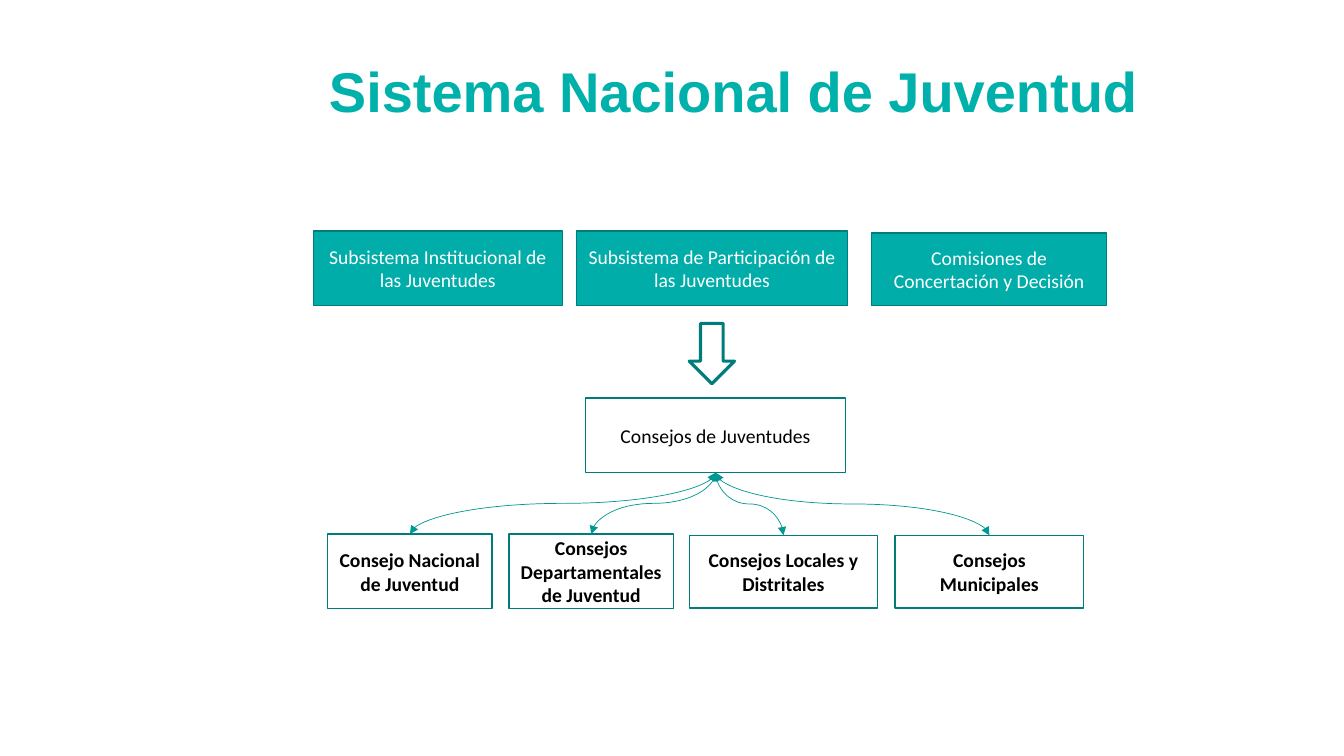
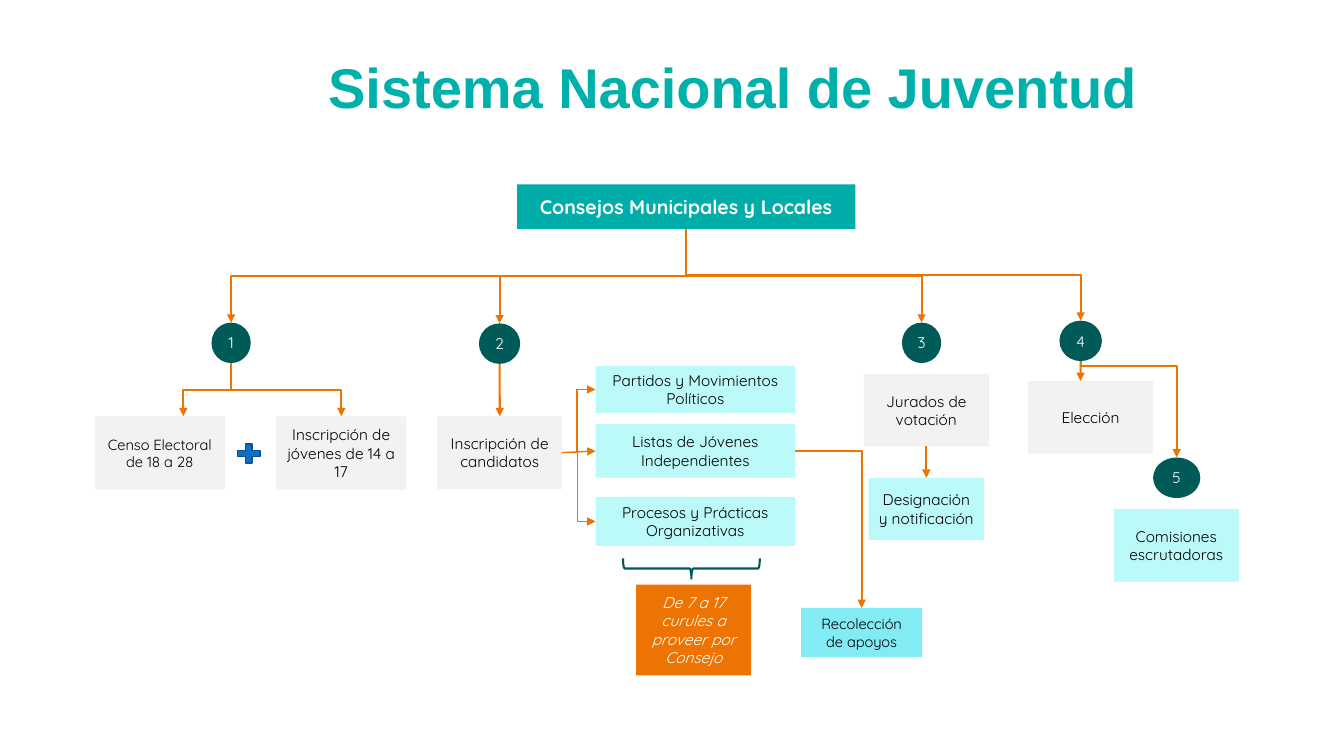
from dataclasses import dataclass

from lxml.etree import SubElement
from pptx import Presentation
from pptx.dml.color import RGBColor
from pptx.enum.shapes import MSO_CONNECTOR as LINK, MSO_SHAPE as SHAPE
from pptx.enum.text import MSO_ANCHOR as ANCHOR, MSO_AUTO_SIZE as FIT, PP_ALIGN as ALIGN
from pptx.oxml.ns import qn
from pptx.util import Cm, Pt


@dataclass(frozen=True)
class Theme:
    title: str = "00B1AB"
    teal: str = "00ADA9"
    teal_line: str = "007D7A"
    curve: str = "009893"
    dark: str = "005A58"
    orange: str = "ED7403"
    gray: str = "F2F2F2"
    pale: str = "BBFAF9"
    aqua: str = "82EBF4"
    blue: str = "0F6FC6"
    blue_line: str = "0B5292"
    white: str = "FFFFFF"
    black: str = "000000"
    title_font: str = "Arial"
    system_font: str = "Calibri"
    council_font: str = "Quicksand"
    title_size: float = 40
    large: float = 14
    body: float = 11
    small: float = 10.5


T = Theme()
TOP, LEFT, BOTTOM, RIGHT = range(4)
TITLE = "Sistema Nacional de Juventud"

SYSTEM_BASE = dict(font=T.system_font, size=T.large, line=T.teal_line, line_width=1)
COUNCIL_BASE = dict(font=T.council_font, size=T.body, color=T.black)
STYLES = {
    "subsystem": dict(SYSTEM_BASE, fill=T.teal, color=T.white),
    "councils": dict(SYSTEM_BASE, fill=T.white, color=T.black),
    "council": dict(SYSTEM_BASE, fill=T.white, color=T.black, bold=True),
    "root": dict(COUNCIL_BASE, fill=T.teal, color=T.white, size=T.large, bold=True),
    "stage": dict(COUNCIL_BASE, fill=T.gray),
    "census": dict(COUNCIL_BASE, fill=T.gray, size=T.small),
    "detail": dict(COUNCIL_BASE, fill=T.pale),
    "support": dict(COUNCIL_BASE, fill=T.aqua, size=T.small),
    "seats": dict(COUNCIL_BASE, fill=T.orange, color=T.white, italic=True),
    "step": dict(COUNCIL_BASE, fill=T.dark, color=T.white, kind=SHAPE.OVAL),
    "down": dict(kind=SHAPE.DOWN_ARROW, line=T.teal_line, line_width=2.25),
    "brace": dict(kind=SHAPE.LEFT_BRACE, line=T.dark, line_width=1.5, rotation=270),
    "plus": dict(kind=SHAPE.MATH_PLUS, fill=T.blue, line=T.blue_line, line_width=1),
}

# key: (style, text, (left, top, width, height) in cm)
SYSTEM = {
    "institutional": ("subsystem", "Subsistema Institucional de las Juventudes",
                      (7.9, 5.82, 6.27, 1.88)),
    "participation": ("subsystem", "Subsistema de Participación de las Juventudes",
                      (14.53, 5.82, 6.83, 1.88)),
    "commissions": ("subsystem", "Comisiones de Concertación y Decisión",
                    (21.97, 5.87, 5.92, 1.83)),
    "arrow": ("down", "", (17.37, 8.15, 1.14, 1.52)),
    "councils": ("councils", "Consejos de Juventudes", (14.76, 10.03, 6.55, 1.88)),
    "national": ("council", "Consejo Nacional de Juventud", (8.26, 13.46, 4.14, 1.88)),
    "departmental": ("council", "Consejos Departamentales de Juventud",
                     (12.83, 13.46, 4.14, 1.88)),
    "local": ("council", "Consejos Locales y Distritales", (17.37, 13.49, 4.75, 1.83)),
    "municipal": ("council", "Consejos Municipales", (22.56, 13.49, 4.75, 1.83)),
}
COUNCILS = {
    "root": ("root", "Consejos Municipales y Locales", (13.03, 4.65, 8.53, 1.12)),
    "1": ("step", "1", (5.33, 8.13, 0.99, 1.02)),
    "2": ("step", "2", (12.07, 8.15, 1.04, 1.02)),
    "3": ("step", "3", (22.73, 8.13, 0.99, 1.02)),
    "4": ("step", "4", (26.7, 8.08, 1.07, 1.02)),
    "5": ("step", "5", (29.06, 11.53, 1.19, 1.02)),
    "census": ("census", "Censo Electoral de 18 a 28", (2.39, 10.49, 3.28, 1.85)),
    "plus": ("plus", "", (5.89, 11.1, 0.76, 0.66)),
    "youth": ("stage", "Inscripción de jóvenes de 14 a 17", (6.96, 10.49, 3.28, 1.85)),
    "candidates": ("stage", "Inscripción de candidatos", (11.02, 10.49, 3.15, 1.83)),
    "parties": ("detail", "Partidos y Movimientos Políticos", (15.01, 9.22, 5.03, 1.19)),
    "lists": ("detail", "Listas de Jóvenes Independientes", (15.01, 10.69, 5.03, 1.35)),
    "practices": ("detail", "Procesos y Prácticas Organizativas",
                  (15.01, 12.52, 5.03, 1.24)),
    "brace": ("brace", "", (17.17, 12.6, 0.51, 3.45)),
    "seats": ("seats", "De 7 a 17 curules a proveer por Consejo",
              (16.03, 14.73, 2.9, 2.29)),
    "support": ("support", "Recolección de apoyos", (20.19, 15.32, 3.05, 1.24)),
    "jurors": ("stage", "Jurados de votación", (21.77, 9.42, 3.15, 1.83)),
    "notice": ("detail", "Designación y notificación", (21.89, 12.04, 2.91, 1.57)),
    "election": ("stage", "Elección", (25.91, 9.6, 3.15, 1.83)),
    "scrutiny": ("detail", "Comisiones escrutadoras", (28.07, 12.83, 3.15, 1.83)),
}

CURVE = dict(kind=LINK.CURVE, color=T.curve, width=0.5, both_ends=True)
ELBOW = dict(kind=LINK.ELBOW, width=1.5)
SPLIT = dict(kind=LINK.ELBOW, width=1.25, sides=(RIGHT, LEFT), bend=0.45)

# (from, to, format)
SYSTEM_LINKS = [("councils", key, CURVE)
                for key in ("municipal", "local", "departmental", "national")]
COUNCIL_LINKS = [
    *[("root", step, ELBOW) for step in "1234"],
    ("1", "census", dict(ELBOW, end_x=4.62)),
    ("1", "youth", ELBOW),
    ("2", "candidates", dict(width=1.5)),
    ("candidates", "parties", SPLIT),
    ("candidates", "practices", dict(SPLIT, width=1)),
    ("candidates", "lists", dict(width=1, sides=(RIGHT, LEFT))),
    ("lists", "support", dict(kind=LINK.ELBOW, width=1.25, sides=(RIGHT, TOP))),
    ("jurors", "notice", dict(width=1.25)),
    ("4", "election", dict(width=1.5, end_x=27.23)),
    ("4", "5", dict(ELBOW, bend=0.05)),
]

SLIDES = [
    ((6.5, 1.3), SYSTEM, SYSTEM_LINKS),
    ((6.48, 1.19), COUNCILS, COUNCIL_LINKS),
]


def write(shape, text, font, size, color, bold=False, italic=False):
    frame = shape.text_frame
    frame.word_wrap = True
    paragraph = frame.paragraphs[0]
    paragraph.alignment = ALIGN.CENTER
    run = paragraph.add_run()
    run.text = text
    for name, value in dict(name=font, size=Pt(size), bold=bold, italic=italic).items():
        setattr(run.font, name, value)
    run.font.color.rgb = RGBColor.from_string(color)


def set_title(slide, left, top):
    title = slide.shapes.title
    title.left, title.top, title.width, title.height = map(Cm, (left, top, 23.95, 1.96))
    write(title, TITLE, T.title_font, T.title_size, T.title, bold=True)
    title.text_frame.vertical_anchor = ANCHOR.TOP
    title.text_frame.auto_size = FIT.NONE


def add_part(slide, text, place, kind=SHAPE.RECTANGLE, fill=None, line=None,
             line_width=1, rotation=0, **text_format):
    part = slide.shapes.add_shape(kind, *map(Cm, place))
    part.shadow.inherit = False
    part.rotation = rotation
    if fill:
        part.fill.solid()
        part.fill.fore_color.rgb = RGBColor.from_string(fill)
    else:
        part.fill.background()
    if line:
        part.line.color.rgb = RGBColor.from_string(line)
        part.line.width = Pt(line_width)
    else:
        part.line.fill.background()
    if text:
        write(part, text, **text_format)
        part.text_frame.vertical_anchor = ANCHOR.MIDDLE
    return part


def side_middle(part, side):
    across, down = {TOP: (1, 0), LEFT: (0, 1), BOTTOM: (1, 2), RIGHT: (2, 1)}[side]
    return part.left + part.width * across // 2, part.top + part.height * down // 2


def turn_downwards(link, start, end):
    """Turn an elbow or curve so that it leaves and arrives vertically."""
    (x1, y1), (x2, y2) = start, end
    run, drop = abs(x2 - x1), y2 - y1
    link.left, link.top = (x1 + x2 - drop) // 2, (y1 + y2 - run) // 2
    link.width, link.height = drop, run
    frame = link._element.spPr.find(qn("a:xfrm"))
    for flip in ("flipH", "flipV"):
        frame.attrib.pop(flip, None)
    frame.set("rot", "16200000" if x2 > x1 else "5400000")
    if x2 > x1:
        frame.set("flipH", "1")


def add_link(slide, source, target, kind=LINK.STRAIGHT, color=T.orange, width=1.0,
             sides=(BOTTOM, TOP), bend=None, end_x=None, both_ends=False):
    start, end = side_middle(source, sides[0]), side_middle(target, sides[1])
    if end_x is not None:
        end = Cm(end_x), end[1]
    link = slide.shapes.add_connector(kind, *start, *end)
    # An oval numbers its sides differently, except for the top.
    if source.auto_shape_type != SHAPE.OVAL:
        link.begin_connect(source, sides[0])
    if end_x is None:
        link.end_connect(target, sides[1])

    properties = link._element.spPr
    geometry = properties.find(qn("a:prstGeom"))
    if kind != LINK.STRAIGHT and sides == (BOTTOM, TOP):
        turn_downwards(link, start, end)
    elif sides == (RIGHT, TOP):
        geometry.set("prst", "bentConnector2")
    if bend is not None:
        SubElement(geometry.find(qn("a:avLst")), qn("a:gd"),
                   name="adj1", fmla=f"val {round(bend * 100000)}")

    link.line.color.rgb = RGBColor.from_string(color)
    link.line.width = Pt(width)
    outline = properties.find(qn("a:ln"))
    for tip in ("a:headEnd", "a:tailEnd") if both_ends else ("a:tailEnd",):
        SubElement(outline, qn(tip), type="triangle")
    SubElement(properties, qn("a:effectLst"))


def main():
    deck = Presentation()
    deck.slide_width, deck.slide_height = Cm(33.87), Cm(19.05)
    title_only = deck.slide_layouts[5]
    for title_place, parts, links in SLIDES:
        slide = deck.slides.add_slide(title_only)
        set_title(slide, *title_place)
        drawn = {key: add_part(slide, text, place, **STYLES[style])
                 for key, (style, text, place) in parts.items()}
        for source, target, look in links:
            add_link(slide, drawn[source], drawn[target], **look)
    deck.save("out.pptx")


if __name__ == "__main__":
    main()
